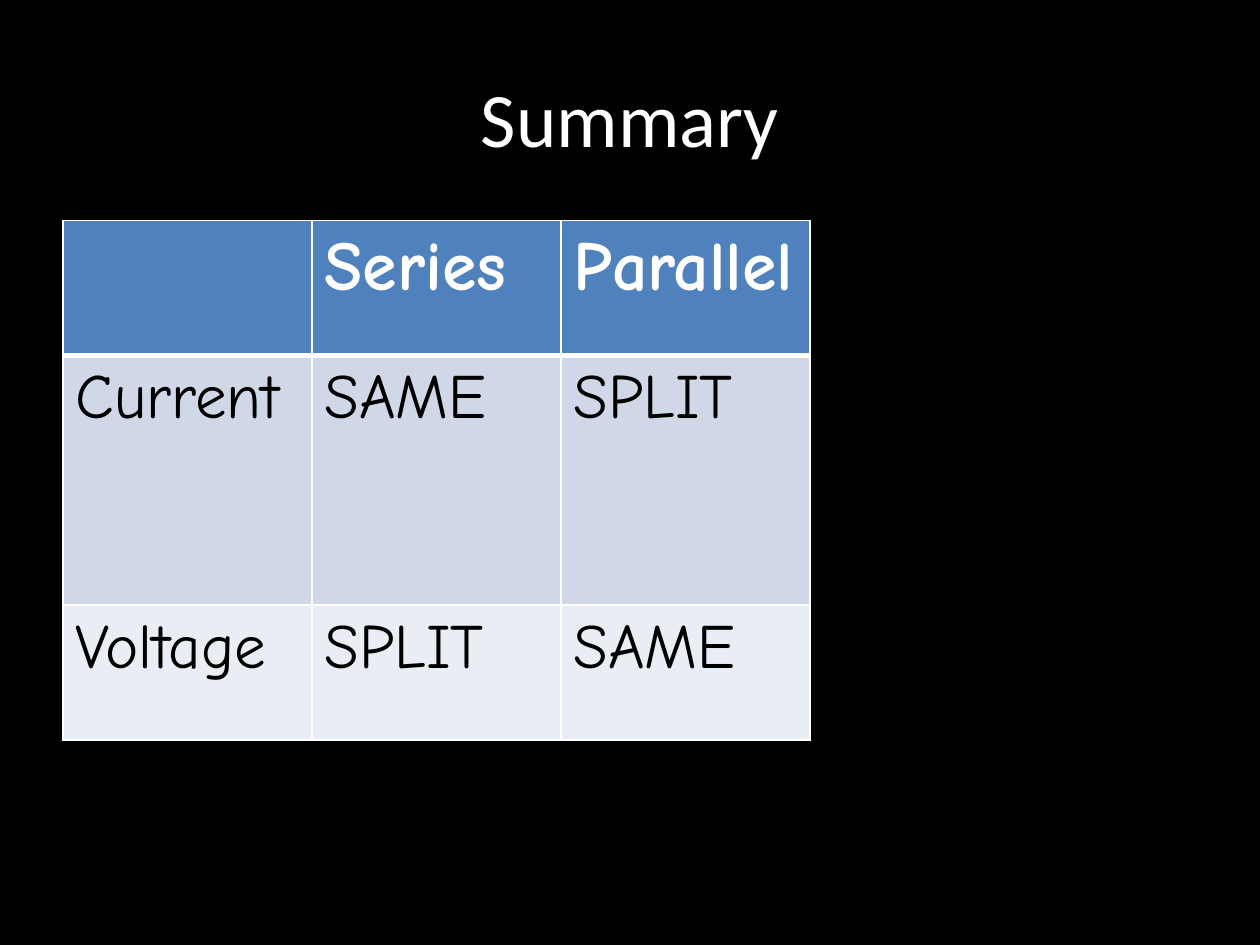
from dataclasses import dataclass

from lxml import etree
from pptx import Presentation
from pptx import util as u
from pptx.dml.color import RGBColor
from pptx.enum import text
from pptx.oxml import ns


@dataclass(frozen=True)
class Theme:
    """Colours, fonts and type sizes."""
    background: str = "000000"
    light: str = "FFFFFF"
    dark: str = "000000"
    header_fill: str = "4F81BD"
    row_fills: tuple = ("D0D8E8", "E9EDF4")
    title_font: str = "Calibri"
    table_font: str = "Comic Neue"
    title_size: int = 44
    header_size: int = 40
    body_size: int = 36
    border: int = 1
    header_border: int = 3


def write(frame, words, *, font, size, color, bold=False, align=None):
    """Put formatted text into a text frame."""
    para = frame.paragraphs[0]
    para.alignment = align
    span = para.add_run()
    span.text = words
    span.font.name = font
    span.font.size = u.Pt(size)
    span.font.bold = bold
    span.font.color.rgb = RGBColor.from_string(color)


def fill(target, color):
    """Give a cell or background a solid colour."""
    target.fill.solid()
    target.fill.fore_color.rgb = RGBColor.from_string(color)


def outline(cell, color, widths):
    """Draw the left, right, top and bottom borders of a cell."""
    properties = cell._tc.get_or_add_tcPr()
    for place, (side, width) in enumerate(zip("LRTB", widths)):
        line = etree.Element(ns.qn(f"a:ln{side}"), w=str(u.Pt(width)))
        solid = etree.SubElement(line, ns.qn("a:solidFill"))
        etree.SubElement(solid, ns.qn("a:srgbClr"), val=color)
        properties.insert(place, line)


class SlideBuilder:
    """Hold the theme and the current slide."""

    def __init__(self, deck, theme):
        """Start a title-only slide on a plain background."""
        self.theme = theme
        self.page = deck.slides.add_slide(deck.slide_layouts[5])
        fill(self.page.background, theme.background)

    def title(self, words, left, top, width, height):
        """Place and format the title."""
        box = self.page.shapes.title
        box.left, box.top, box.width, box.height = left, top, width, height
        box.text_frame.vertical_anchor = text.MSO_ANCHOR.MIDDLE
        write(box.text_frame, words, font=self.theme.title_font,
              size=self.theme.title_size, color=self.theme.light,
              align=text.PP_ALIGN.CENTER)

    def table(self, rows, left, top, column_width, row_heights):
        """Add a table with a header row and banded body rows."""
        theme = self.theme
        columns = len(rows[0])
        table = self.page.shapes.add_table(
            len(rows), columns, left, top,
            column_width * columns, sum(row_heights)).table
        for column in table.columns:
            column.width = column_width
        for index, (row, height) in enumerate(zip(rows, row_heights)):
            table.rows[index].height = height
            header = index == 0
            shade = theme.header_fill if header else theme.row_fills[(index - 1) % 2]
            above = theme.header_border if index == 1 else theme.border
            below = theme.header_border if header else theme.border
            for cell, words in zip(table.rows[index].cells, row):
                fill(cell, shade)
                outline(cell, theme.light, (theme.border, theme.border, above, below))
                if words:
                    write(cell.text_frame, words, font=theme.table_font,
                          size=theme.header_size if header else theme.body_size,
                          color=theme.light if header else theme.dark, bold=header)


def main():
    """Build the summary slide."""
    deck = Presentation()
    deck.slide_width, deck.slide_height = u.Cm(25.4), u.Cm(19.05)
    summary = SlideBuilder(deck, Theme())
    summary.title("Summary", u.Cm(1.27), u.Cm(0.76), u.Cm(22.86), u.Cm(3.18))
    summary.table(
        [("", "Series", "Parallel"),
         ("Current", "SAME", "SPLIT"),
         ("Voltage", "SPLIT", "SAME")],
        u.Cm(1.27), u.Cm(4.45), u.Cm(5.02),
        [u.Cm(2.72), u.Cm(5.03), u.Cm(2.72)])
    deck.save("out.pptx")


if __name__ == "__main__":
    main()
